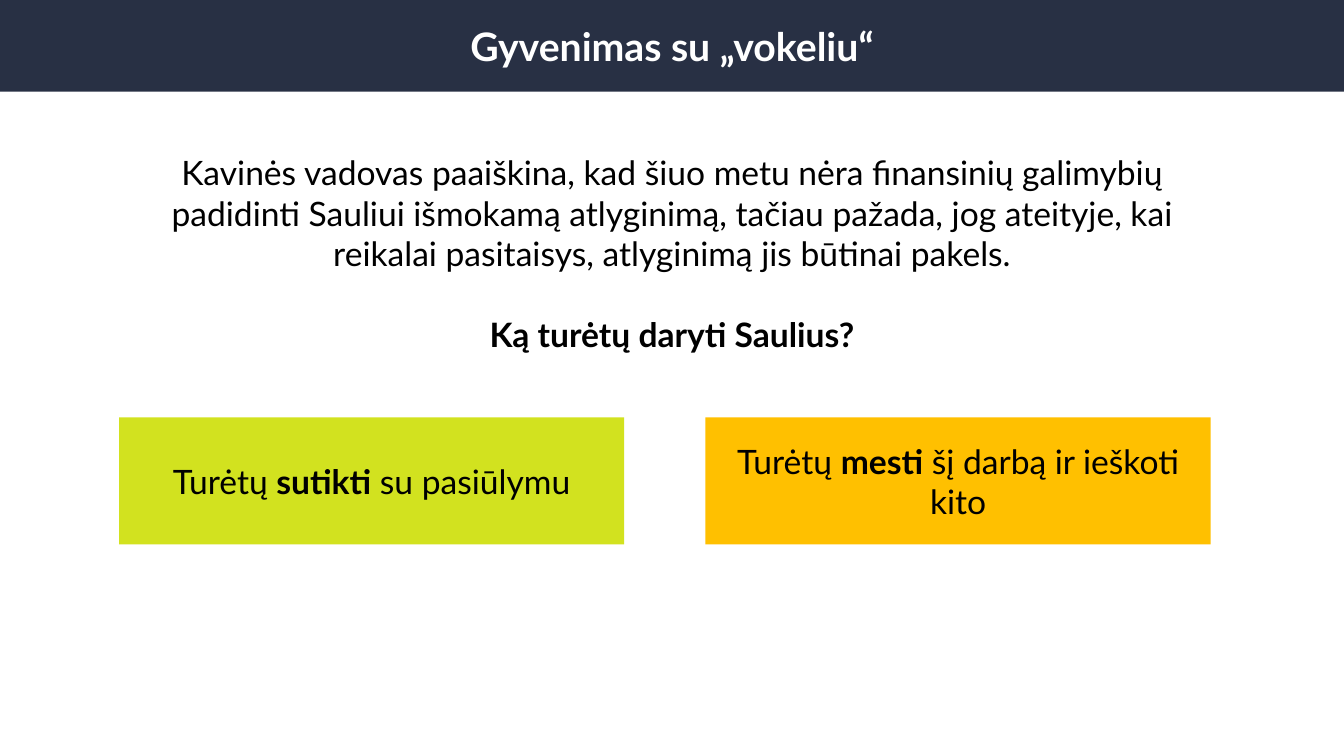
from pptx import Presentation
from pptx.dml.color import RGBColor
from pptx.enum.shapes import MSO_SHAPE
from pptx.enum.text import MSO_ANCHOR, PP_ALIGN
from pptx.util import Cm, Pt


def write(para, runs, size=24, color="000000"):
    para.alignment = PP_ALIGN.CENTER
    for text, bold in runs:
        run = para.add_run()
        run.text = text
        font = run.font
        font.name, font.size, font.bold = "Lato", Pt(size), bold
        font.color.rgb = RGBColor.from_string(color)


def block(left, top, width, height, fill):
    shape = slide.shapes.add_shape(
        MSO_SHAPE.RECTANGLE, Cm(left), Cm(top), Cm(width), Cm(height))
    shape.shadow.inherit = False
    shape.fill.solid()
    shape.fill.fore_color.rgb = RGBColor.from_string(fill)
    shape.line.fill.background()
    frame = shape.text_frame
    frame.word_wrap = True
    frame.vertical_anchor = MSO_ANCHOR.MIDDLE
    return frame


deck = Presentation()
deck.slide_width, deck.slide_height = Cm(33.87), Cm(19.05)
slide = deck.slides.add_slide(deck.slide_layouts[6])

# Title band
band = block(0, 0, 33.87, 2.31, "283044")
write(band.paragraphs[0], [("Gyvenimas su „vokeliu“", True)], 28, "FFFFFF")

# Story and question
story = slide.shapes.add_textbox(Cm(3.89), Cm(3.71), Cm(26.09), Cm(5.38)).text_frame
story.word_wrap = True
write(story.paragraphs[0], [(
    "Kavinės vadovas paaiškina, kad šiuo metu nėra finansinių galimybių "
    "padidinti Sauliui išmokamą atlyginimą, tačiau pažada, jog ateityje, kai "
    "reikalai pasitaisys, atlyginimą jis būtinai pakels.", False)])
query = story.add_paragraph()
query.space_before = Pt(28.8)
write(query, [("Ką turėtų daryti Saulius?", True)])

# Two answers
answers = [
    (3, "D2E21F", "sutikti", " su pasiūlymu"),
    (17.78, "FFC000", "mesti", " šį darbą ir ieškoti kito"),
]
for left, fill, verb, rest in answers:
    frame = block(left, 10.52, 12.73, 3.2, fill)
    frame.margin_left = frame.margin_right = Cm(0.79)
    write(frame.paragraphs[0], [("Turėtų ", False), (verb, True), (rest, False)])

deck.save("out.pptx")
